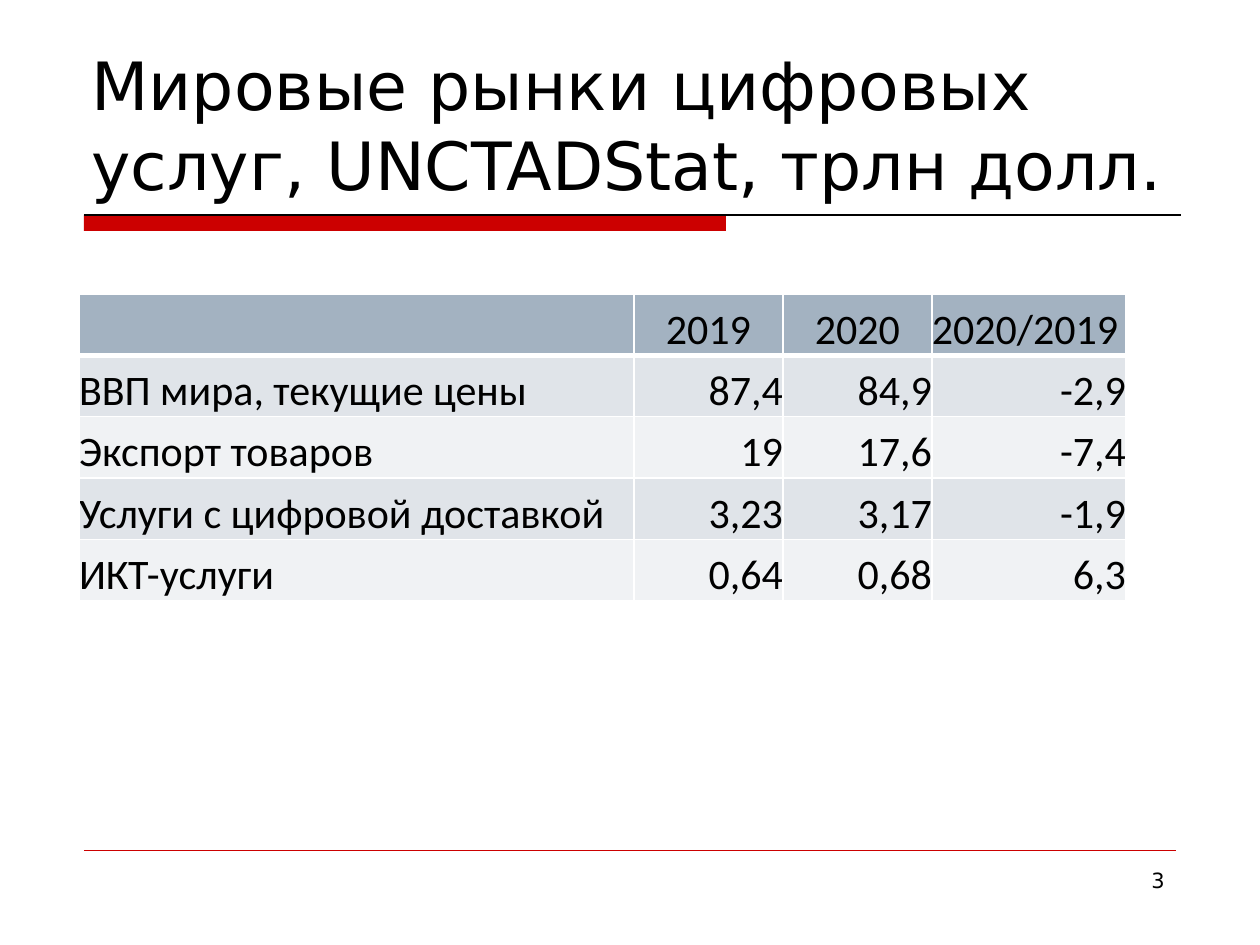
from dataclasses import dataclass

from lxml.etree import SubElement
from pptx import Presentation
from pptx.dml.color import RGBColor
from pptx.enum.shapes import MSO_CONNECTOR, MSO_SHAPE
from pptx.enum.text import MSO_ANCHOR, PP_ALIGN
from pptx.oxml.ns import qn
from pptx.util import Emu, Pt

SCALE = 914400 / 126
RED, BLACK, WHITE = "CC0000", "000000", "FFFFFF"
HEAD, BANDS = "A3B2C1", ("E0E4E9", "F0F2F4")
SANS, BODY = "DejaVu Sans", "Calibri"
LEFT, MID, RIGHT = PP_ALIGN.LEFT, PP_ALIGN.CENTER, PP_ALIGN.RIGHT


@dataclass
class Label:
    text: str
    box: tuple[int, int, int, int]
    size: int
    align: PP_ALIGN
    anchor: MSO_ANCHOR


@dataclass
class Rule:
    start: int
    end: int
    top: int
    color: str
    width: float


LABELS = [
    Label("Мировые рынки цифровых услуг, UNCTADStat, трлн долл.",
          (79, 42, 1103, 168), 38, LEFT, MSO_ANCHOR.BOTTOM),
    Label("3", (903, 861, 274, 65), 12, RIGHT, MSO_ANCHOR.TOP),
]
RULES = [Rule(84, 1181, 215, BLACK, 0.75), Rule(84, 1176, 850, RED, 0.25)]
WIDTHS = (555, 149, 149, 194)
ROWS = [
    ("", "2019", "2020", "2020/2019"),
    ("ВВП мира, текущие цены", "87,4", "84,9", "-2,9"),
    ("Экспорт товаров", "19", "17,6", "-7,4"),
    ("Услуги с цифровой доставкой", "3,23", "3,17", "-1,9"),
    ("ИКТ-услуги", "0,64", "0,68", "6,3"),
]


def px(num: int) -> Emu:
    return Emu(round(num * SCALE))


def rgb(code: str) -> RGBColor:
    return RGBColor.from_string(code)


def write(frame, text: str, size: int, face: str, align: PP_ALIGN) -> None:
    para = frame.paragraphs[0]
    para.alignment = align
    run = para.add_run()
    run.text = text
    run.font.size = Pt(size)
    run.font.name = face
    run.font.color.rgb = rgb(BLACK)


def draw_label(slide, label: Label) -> None:
    frame = slide.shapes.add_textbox(*map(px, label.box)).text_frame
    frame.word_wrap = True
    frame.vertical_anchor = label.anchor
    write(frame, label.text, label.size, SANS, label.align)


def draw_rule(slide, rule: Rule) -> None:
    line = slide.shapes.add_connector(
        MSO_CONNECTOR.STRAIGHT, px(rule.start), px(rule.top),
        px(rule.end), px(rule.top))
    line.line.color.rgb = rgb(rule.color)
    line.line.width = Pt(rule.width)
    SubElement(line._element.spPr, qn("a:effectLst"))


def draw_bar(slide) -> None:
    bar = slide.shapes.add_shape(
        MSO_SHAPE.RECTANGLE, px(84), px(215), px(642), px(16))
    bar.shadow.inherit = False
    bar.fill.solid()
    bar.fill.fore_color.rgb = rgb(RED)
    bar.line.fill.background()


def edge(cell, side: str, width: int) -> None:
    line = SubElement(cell._tc.get_or_add_tcPr(), qn(f"a:ln{side}"),
                      w=str(Pt(width)))
    fill = SubElement(line, qn("a:solidFill"))
    SubElement(fill, qn("a:srgbClr"), val=WHITE)


def draw_cell(cell, text: str, row: int, col: int) -> None:
    cell.margin_left = cell.margin_right = 0
    cell.margin_top = cell.margin_bottom = 0
    cell.vertical_anchor = MSO_ANCHOR.BOTTOM
    # The gap under the heading row is thicker than the others
    thick = {(0, "B"): 3, (1, "T"): 3}
    for side in "LRTB":
        edge(cell, side, thick.get((row, side), 1))
    cell.fill.solid()
    cell.fill.fore_color.rgb = rgb(BANDS[(row - 1) % 2] if row else HEAD)
    if row:
        align = RIGHT if col else LEFT
    else:
        align = MID if col < len(WIDTHS) - 1 else LEFT
    if text:
        write(cell.text_frame, text, 24, BODY, align)


def draw_table(slide) -> None:
    table = slide.shapes.add_table(
        len(ROWS), len(WIDTHS), px(79), px(294),
        px(sum(WIDTHS)), px(307)).table
    table.first_row = table.horz_banding = False
    for col, width in enumerate(WIDTHS):
        table.columns[col].width = px(width)
    for row, texts in enumerate(ROWS):
        for col, text in enumerate(texts):
            draw_cell(table.cell(row, col), text, row, col)


def main() -> None:
    deck = Presentation()
    deck.slide_width, deck.slide_height = px(1260), px(945)
    slide = deck.slides.add_slide(deck.slide_layouts[6])
    # Title bar and rules
    draw_bar(slide)
    for rule in RULES:
        draw_rule(slide, rule)
    # Title and page number
    for label in LABELS:
        draw_label(slide, label)
    # Market figures
    draw_table(slide)
    deck.save("out.pptx")


if __name__ == "__main__":
    main()
